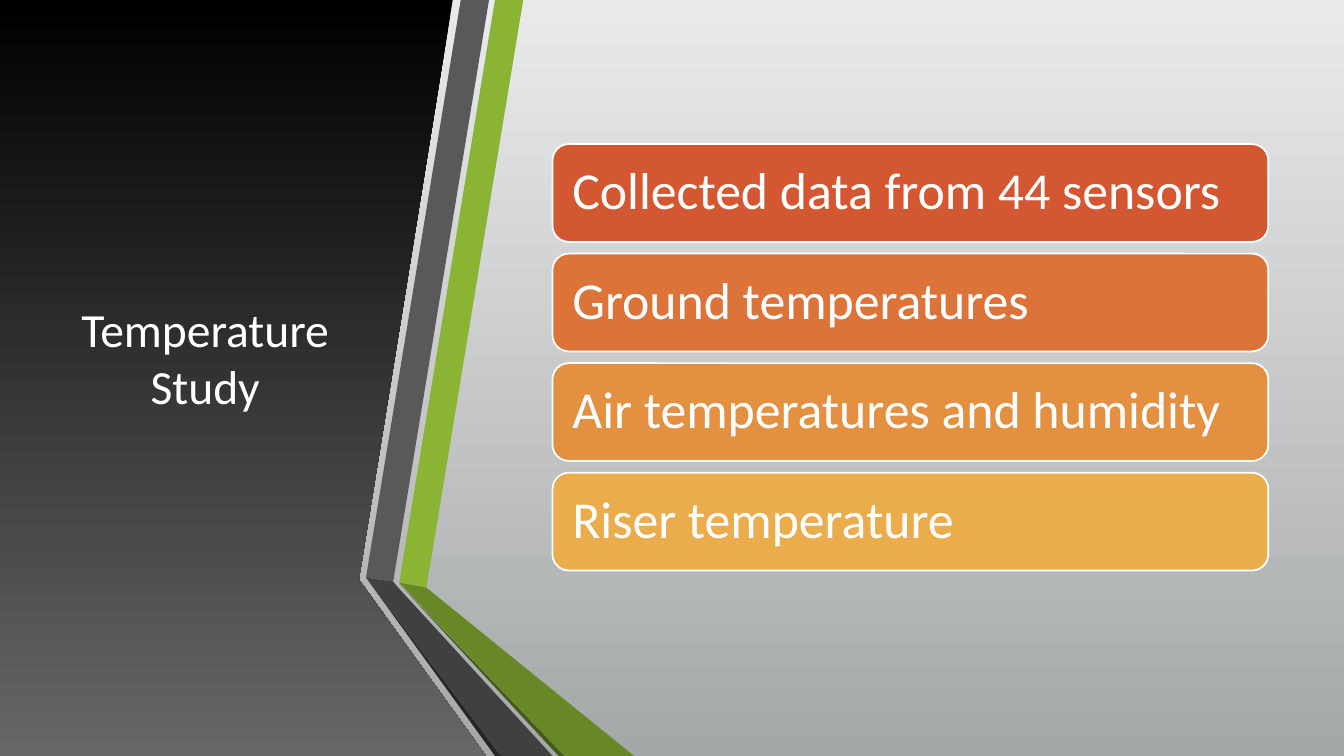
from lxml import etree
from pptx import Presentation
from pptx.dml.color import RGBColor
from pptx.enum.shapes import MSO_SHAPE
from pptx.enum.text import MSO_ANCHOR, MSO_AUTO_SIZE, PP_ALIGN
from pptx.util import Inches, Pt

ROUNDED = MSO_SHAPE.ROUNDED_RECTANGLE
MIDDLE = MSO_ANCHOR.MIDDLE
NO_AUTOFIT = MSO_AUTO_SIZE.NONE
LEFT, CENTER = PP_ALIGN.LEFT, PP_ALIGN.CENTER

# Content
TITLE = "Temperature Study"
FINDINGS = [
    ("Collected data from 44 sensors", "red"),
    ("Ground temperatures", "rust"),
    ("Air temperatures and humidity", "orange"),
    ("Riser temperature", "amber"),
]
FONT = "Calibri"
COLORS = {
    "white": "FFFFFF", "black": "000000", "panel_foot": "676767",
    "mist": "E9EAEB", "steel": "A5A8A9",
    "green": "8BB434", "green_fold": "688727", "green_edge": "465A1A",
    "gray": "595959", "gray_fold": "404040", "gray_edge": "262626",
    "red": "D35731", "rust": "DC7339", "orange": "E49041", "amber": "EBAC4B",
}

# Outlines in inches
PANEL = [(0, 0), (4.49, 0), (3.56, 5.75), (4.82, 7.5), (0, 7.5)]
RIBBONS = [
    ("green", [(3.96, 5.78), (4.23, 5.83), (5.19, 0), (4.91, 0)]),
    ("gray", [(4.85, 0), (4.57, 0), (3.63, 5.73), (3.9, 5.77)]),
    ("gray_edge", [(3.63, 5.73), (4.91, 7.5), (4.97, 7.5)]),
    ("green_edge", [(3.96, 5.79), (5.54, 7.5), (5.6, 7.5)]),
    ("green_fold", [(3.96, 5.78), (5.6, 7.5), (6.29, 7.5), (4.23, 5.83)]),
    ("gray_fold", [(5.48, 7.5), (3.95, 5.83), (3.9, 5.77), (3.63, 5.73),
                   (4.97, 7.5)]),
]

# Card column
CARD_LEFT, CARD_WIDTH, CARD_HEIGHT = 5.48, 7.1, 0.97
FIRST_TOP, LAST_TOP = 1.43, 4.69
CARD_PITCH = (LAST_TOP - FIRST_TOP) / (len(FINDINGS) - 1)


def color(name):
    return RGBColor.from_string(COLORS[name])


def fill_downward(fill, top, bottom):
    fill.gradient()
    fill.gradient_angle = 270
    for stop, name, position in zip(fill.gradient_stops, (top, bottom), (0, 1)):
        stop.color.rgb = color(name)
        stop.position = position
    # The theme's stops carry tints that would alter the colours
        

def add_outline(shapes, points):
    corners = [(Inches(x), Inches(y)) for x, y in points]
    builder = shapes.build_freeform(*corners[0])
    builder.add_line_segments(corners[1:], close=True)
    outline = builder.convert_to_shape()
    outline.shadow.inherit = False
    outline.line.fill.background()
    return outline


def write(frame, text, size, align):
    frame.word_wrap = True
    frame.auto_size = NO_AUTOFIT
    frame.vertical_anchor = MIDDLE
    paragraph = frame.paragraphs[0]
    paragraph.alignment = align
    run = paragraph.add_run()
    run.text = text
    run.font.name = FONT
    run.font.size = Pt(size)
    run.font.color.rgb = color("white")
    return paragraph


def main():
    deck = Presentation()
    deck.slide_width, deck.slide_height = Inches(13.33), Inches(7.5)
    slide = deck.slides.add_slide(deck.slide_layouts[5])
    shapes = slide.shapes
    fill_downward(slide.background.fill, "mist", "steel")

    # Dark panel, with the title in front of it
    panel = add_outline(shapes, PANEL)
    fill_downward(panel.fill, "black", "panel_foot")
    title = shapes.title
    title.left, title.top = Inches(0.59), Inches(0.75)
    title.width, title.height = Inches(2.89), Inches(5.58)
    write(title.text_frame, TITLE, 34, CENTER)
    panel.element.addnext(title.element)

    # Folded ribbons
    for name, points in RIBBONS:
        ribbon = add_outline(shapes, points)
        ribbon.fill.solid()
        ribbon.fill.fore_color.rgb = color(name)

    # Finding cards
    for row, (finding, name) in enumerate(FINDINGS):
        card = shapes.add_shape(
            ROUNDED, Inches(CARD_LEFT), Inches(FIRST_TOP + row * CARD_PITCH),
            Inches(CARD_WIDTH), Inches(CARD_HEIGHT))
        card.shadow.inherit = False
        card.fill.solid()
        card.fill.fore_color.rgb = color(name)
        card.line.color.rgb = color("white")
        card.line.width = Pt(1.25)
        frame = card.text_frame
        frame.margin_left = frame.margin_right = Inches(0.15)
        frame.margin_top = frame.margin_bottom = Inches(0.15)
        write(frame, finding, 37, LEFT).line_spacing = 0.9

    deck.save("out.pptx")


if __name__ == "__main__":
    main()
